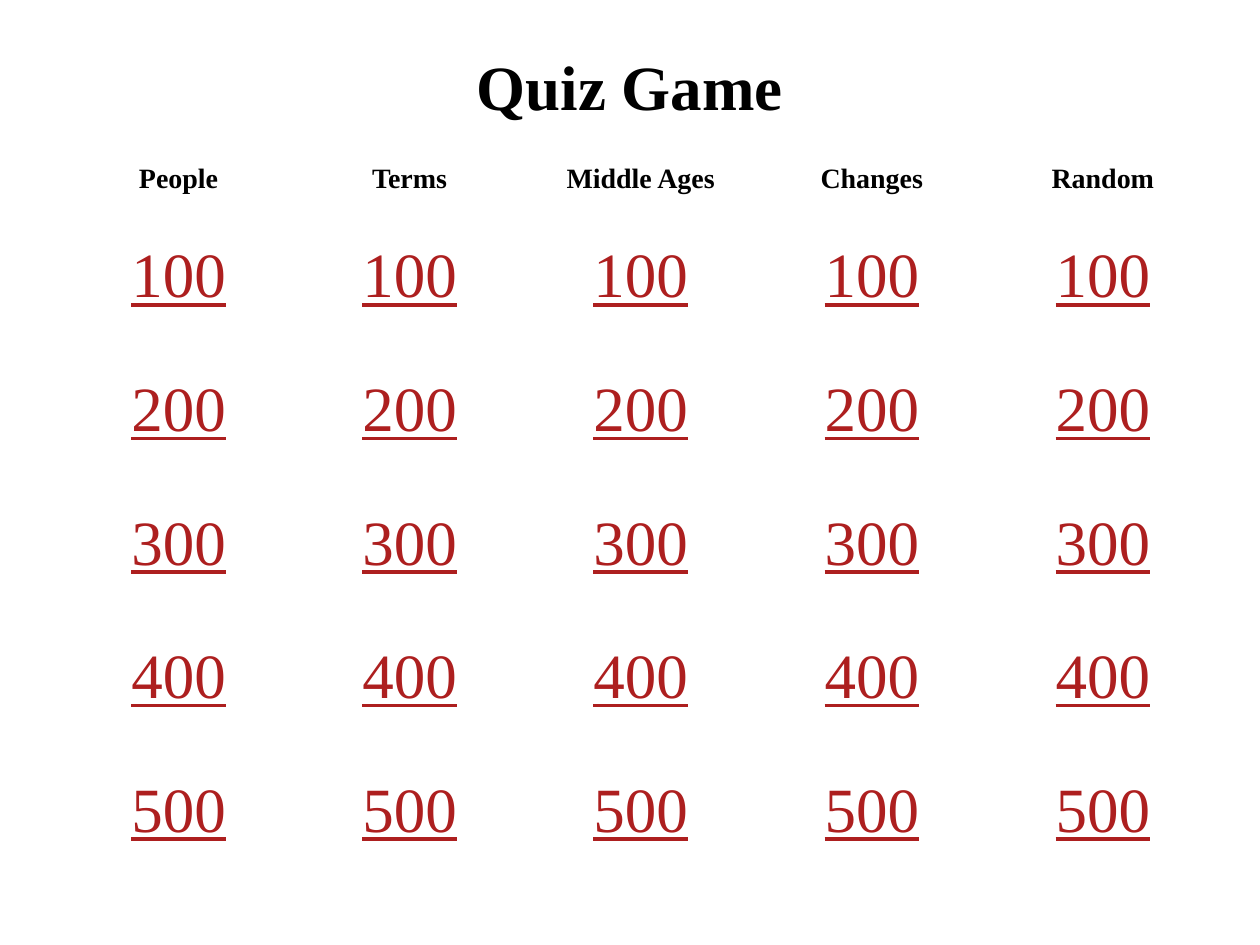
from pptx import Presentation
from pptx.dml.color import RGBColor
from pptx.enum.text import PP_ALIGN
from pptx.util import Inches, Pt

TITLE = "Quiz Game"
CATEGORIES = ["People", "Terms", "Middle Ages", "Changes", "Random"]
POINTS = [100, 200, 300, 400, 500]

FONT = "Times New Roman"
COLORS = {"text": "000000", "points": "AD1F1F"}
TABLE_LEFT, TABLE_TOP, TABLE_WIDTH = 0.5, 1.25, 9.17
HEADER_HEIGHT, POINTS_HEIGHT = 0.62, 1.06


def write(frame, text, size, color, bold=False, underline=False):
    para = frame.paragraphs[0]
    para.text = text
    para.alignment = PP_ALIGN.CENTER
    font = para.font
    font.name, font.size = FONT, Pt(size)
    font.bold, font.underline = bold, underline
    font.color.rgb = RGBColor.from_string(COLORS[color])


deck = Presentation()
deck.slide_width, deck.slide_height = Inches(10), Inches(7.5)
page = deck.slides.add_slide(deck.slide_layouts[6])

title_box = page.shapes.add_textbox(Inches(0), Inches(0.33), Inches(10), Inches(0.71))
title_box.text_frame.word_wrap = True
write(title_box.text_frame, TITLE, 36, "text", bold=True)

heights = [HEADER_HEIGHT] + [POINTS_HEIGHT] * len(POINTS)
board = page.shapes.add_table(
    len(heights), len(CATEGORIES), Inches(TABLE_LEFT), Inches(TABLE_TOP),
    Inches(TABLE_WIDTH), Inches(sum(heights))).table
board.first_row = board.horz_banding = False
for row, height in zip(board.rows, heights):
    row.height = Inches(height)
for cell in board.iter_cells():
    cell.fill.background()

for column, category in enumerate(CATEGORIES):
    write(board.cell(0, column).text_frame, category, 16, "text", bold=True)
    for row, points in enumerate(POINTS, start=1):
        write(board.cell(row, column).text_frame, str(points), 36, "points", underline=True)

deck.save("out.pptx")
